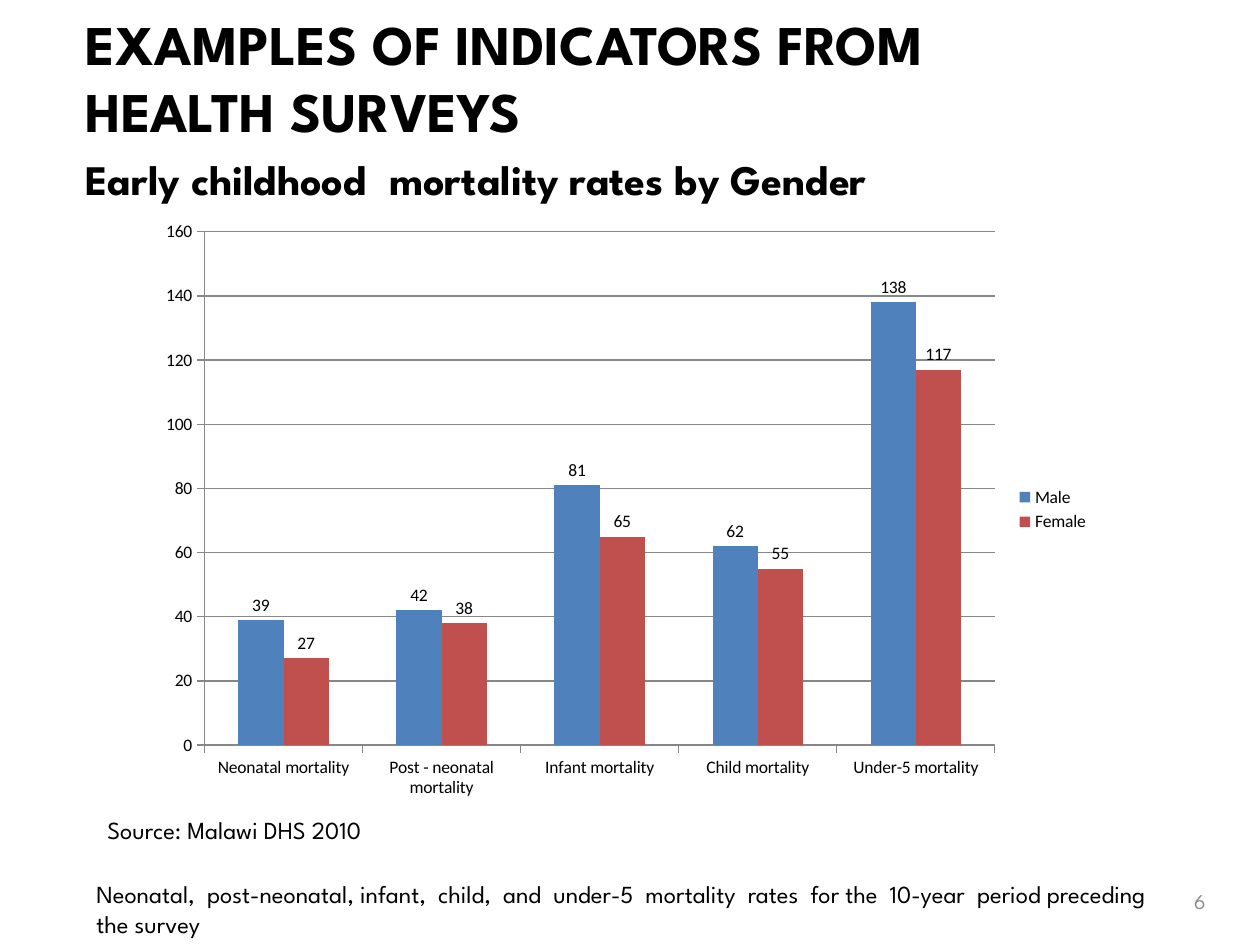
from dataclasses import dataclass

from pptx import Presentation
from pptx.chart.data import CategoryChartData
from pptx.dml.color import RGBColor
from pptx.enum.chart import XL_CHART_TYPE, XL_LABEL_POSITION, XL_LEGEND_POSITION, XL_TICK_MARK
from pptx.enum.text import MSO_ANCHOR, MSO_AUTO_SIZE, PP_ALIGN
from pptx.util import Emu, Pt

PX_PER_INCH = 126
BODY_FONT = "League Spartan"
CHART_FONT = "Calibri"
BLACK = "000000"
GRID = "878787"


@dataclass(frozen=True)
class Box:
    left: int
    top: int
    width: int
    height: int


@dataclass(frozen=True)
class Label:
    text: str
    box: Box
    size: int
    bold: bool = False
    color: str = BLACK
    align: PP_ALIGN = PP_ALIGN.LEFT
    anchor: MSO_ANCHOR = MSO_ANCHOR.TOP
    wrap: bool = True


@dataclass(frozen=True)
class Series:
    name: str
    values: tuple[int, ...]
    color: str


TITLE = Label("EXAMPLES OF INDICATORS FROM HEALTH SURVEYS", Box(73, 3, 1061, 186), 32, bold=True)
LABELS = (
    Label("Early childhood  mortality rates by Gender", Box(73, 147, 1103, 63), 24, bold=True),
    Label(
        "Neonatal,  post-neonatal, infant,  child,  and  under-5  mortality  rates  "
        "for the  10-year  period preceding  the survey",
        Box(84, 873, 1103, 72), 14,
    ),
    Label("Source: Malawi DHS 2010", Box(95, 809, 325, 43), 14, wrap=False),
    Label("6", Box(924, 876, 294, 50), 12, color="8C8C8C",
          align=PP_ALIGN.RIGHT, anchor=MSO_ANCHOR.MIDDLE),
)
CHART_BOX = Box(147, 210, 955, 599)
CATEGORIES = (
    "Neonatal mortality",
    "Post - neonatal mortality",
    "Infant mortality",
    "Child mortality",
    "Under-5 mortality",
)
SERIES = (
    Series("Male", (39, 42, 81, 62, 138), "4F81BD"),
    Series("Female", (27, 38, 65, 55, 117), "C0504D"),
)


def px(n: int) -> Emu:
    return Emu(round(n * 914400 / PX_PER_INCH))


def rgb(value: str) -> RGBColor:
    return RGBColor.from_string(value)


def bounds(box: Box) -> tuple[Emu, ...]:
    return px(box.left), px(box.top), px(box.width), px(box.height)


def write(sp, label: Label) -> None:
    sp.left, sp.top, sp.width, sp.height = bounds(label.box)
    tf = sp.text_frame
    tf.text = label.text
    tf.word_wrap = label.wrap
    tf.auto_size = MSO_AUTO_SIZE.NONE
    tf.vertical_anchor = label.anchor
    p = tf.paragraphs[0]
    p.alignment = label.align
    r = p.runs[0]
    r.font.name = BODY_FONT
    r.font.size = Pt(label.size)
    r.font.bold = label.bold
    r.font.color.rgb = rgb(label.color)


def style_line(line) -> None:
    line.color.rgb = rgb(GRID)
    line.width = Pt(0.75)


def add_mortality_chart(s) -> None:
    data = CategoryChartData()
    data.categories = CATEGORIES
    for series in SERIES:
        data.add_series(series.name, series.values)
    chart = s.shapes.add_chart(XL_CHART_TYPE.COLUMN_CLUSTERED, *bounds(CHART_BOX), data).chart
    chart.has_title = False
    chart.font.name = CHART_FONT
    chart.font.size = Pt(10)
    chart.font.color.rgb = rgb(BLACK)
    chart.has_legend = True
    chart.legend.position = XL_LEGEND_POSITION.RIGHT
    chart.legend.include_in_layout = False

    for axis in (chart.category_axis, chart.value_axis):
        axis.major_tick_mark = XL_TICK_MARK.OUTSIDE
        axis.minor_tick_mark = XL_TICK_MARK.NONE
        style_line(axis.format.line)
    axis = chart.value_axis
    axis.minimum_scale, axis.maximum_scale, axis.major_unit = 0, 160, 20
    axis.has_major_gridlines = True
    style_line(axis.major_gridlines.format.line)

    plot = chart.plots[0]
    plot.vary_by_categories = False
    plot.gap_width = 150
    plot.overlap = 0
    plot.has_data_labels = True
    plot.data_labels.show_value = True
    plot.data_labels.position = XL_LABEL_POSITION.OUTSIDE_END
    for drawn, series in zip(plot.series, SERIES):
        drawn.format.fill.solid()
        drawn.format.fill.fore_color.rgb = rgb(series.color)
        drawn.invert_if_negative = False


def main() -> None:
    prs = Presentation()
    prs.slide_width, prs.slide_height = px(1260), px(945)
    s = prs.slides.add_slide(prs.slide_layouts[5])
    write(s.shapes.title, TITLE)
    for label in LABELS:
        write(s.shapes.add_textbox(*bounds(label.box)), label)
    add_mortality_chart(s)
    prs.save("out.pptx")


if __name__ == "__main__":
    main()
